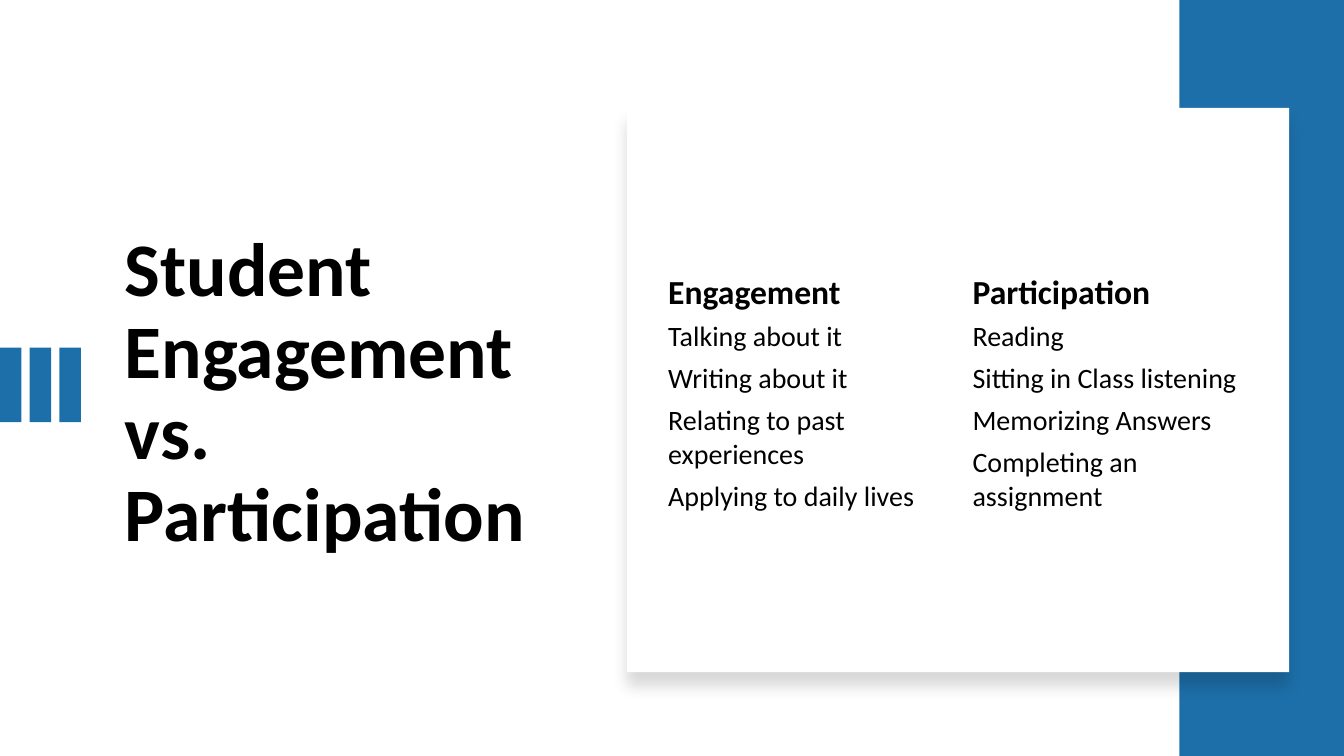
from dataclasses import dataclass

from lxml import etree
from pptx import Presentation
from pptx.dml.color import RGBColor
from pptx.enum.shapes import MSO_SHAPE
from pptx.enum.text import MSO_ANCHOR
from pptx.oxml.ns import qn
from pptx.shapes.autoshape import Shape
from pptx.slide import Slide
from pptx.util import Cm, Pt

RECT = MSO_SHAPE.RECTANGLE
TOP = MSO_ANCHOR.TOP
MIDDLE = MSO_ANCHOR.MIDDLE

COLORS = {"blue": "1D6FA9", "white": "FFFFFF", "black": "000000"}
FONT = "Calibri"
SLIDE_W, SLIDE_H = 33.87, 19.05
BAND_W = 4.15
BAR_COUNT, BAR_PITCH = 3, 0.75


@dataclass(frozen=True)
class Box:
    """Place and size in centimetres."""
    left: float
    top: float
    width: float
    height: float


@dataclass(frozen=True)
class Column:
    left: float
    width: float
    heading: str
    items: list[str]


COLUMNS = [
    Column(16.59, 7.42, "Engagement", [
        "Talking about it",
        "Writing about it",
        "Relating to past experiences",
        "Applying to daily lives",
    ]),
    Column(24.26, 7.47, "Participation", [
        "Reading",
        "Sitting in Class listening",
        "Memorizing Answers",
        "Completing an assignment",
    ]),
]


def add_rect(slide: Slide, box: Box, color: str) -> Shape:
    sp = slide.shapes.add_shape(
        RECT, Cm(box.left), Cm(box.top), Cm(box.width), Cm(box.height))
    sp.shadow.inherit = False
    sp.fill.solid()
    sp.fill.fore_color.rgb = RGBColor.from_string(COLORS[color])
    sp.line.fill.background()
    return sp


def add_soft_shadow(sp: Shape) -> None:
    """Cast a faint black shadow straight down."""
    effects = sp.element.spPr.find(qn("a:effectLst"))
    shadow = etree.SubElement(
        effects, qn("a:outerShdw"), blurRad=str(Pt(11)), dist=str(Pt(10)),
        dir="5400000", algn="t", rotWithShape="0")
    color = etree.SubElement(shadow, qn("a:srgbClr"), val=COLORS["black"])
    etree.SubElement(color, qn("a:alpha"), val="15000")


def add_text(slide: Slide, box: Box, lines: list[str], size: float,
             bold: bool = False, anchor: MSO_ANCHOR = TOP,
             line_spacing: float = 1.0, space_after: float = 6) -> None:
    sp = slide.shapes.add_textbox(
        Cm(box.left), Cm(box.top), Cm(box.width), Cm(box.height))
    tf = sp.text_frame
    tf.word_wrap = True
    tf.vertical_anchor = anchor
    for i, line in enumerate(lines):
        p = tf.add_paragraph() if i else tf.paragraphs[0]
        p.line_spacing = line_spacing
        p.space_after = Pt(space_after)
        r = p.add_run()
        r.text = line
        r.font.name = FONT
        r.font.size = Pt(size)
        r.font.bold = bold
        r.font.color.rgb = RGBColor.from_string(COLORS["black"])


def main() -> None:
    prs = Presentation()
    prs.slide_width, prs.slide_height = Cm(SLIDE_W), Cm(SLIDE_H)
    slide = prs.slides.add_slide(prs.slide_layouts[6])

    add_text(slide, Box(2.9, 4.11, 10.82, 11.66),
             ["Student Engagement vs. Participation"], 54, bold=True,
             anchor=MIDDLE, line_spacing=0.9, space_after=0)
    for i in range(BAR_COUNT):
        add_rect(slide, Box(i * BAR_PITCH, 8.76, 0.54, 1.88), "blue")

    add_rect(slide, Box(SLIDE_W - BAND_W, 0, BAND_W, SLIDE_H), "blue")
    card = add_rect(slide, Box(15.8, 2.72, 16.69, 14.22), "white")
    add_soft_shadow(card)

    for col in COLUMNS:
        add_text(slide, Box(col.left, 6.71, col.width, 1.19),
                 [col.heading], 24, bold=True)
        add_text(slide, Box(col.left, 7.9, col.width, 5.31), col.items, 20)

    prs.save("out.pptx")


if __name__ == "__main__":
    main()
